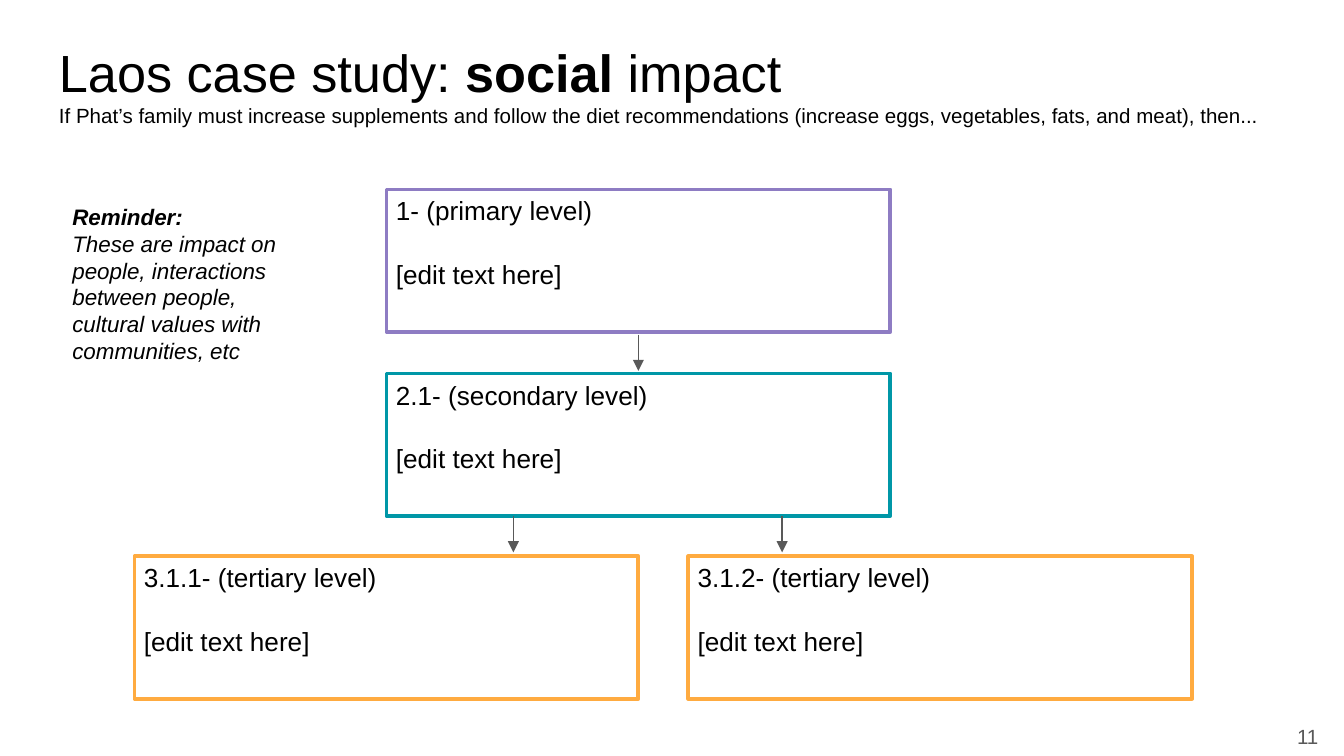
from lxml import etree
from pptx import Presentation
from pptx.dml.color import RGBColor
from pptx.enum.shapes import MSO_CONNECTOR, MSO_SHAPE
from pptx.enum.text import MSO_ANCHOR, PP_ALIGN
from pptx.oxml.ns import qn
from pptx.util import Inches, Pt

BLACK = RGBColor(0x00, 0x00, 0x00)
WHITE = RGBColor(0xFF, 0xFF, 0xFF)
GRAY = RGBColor(0x59, 0x59, 0x59)
PURPLE = RGBColor(0x8E, 0x7C, 0xC3)
TEAL = RGBColor(0x00, 0x97, 0xA7)
ORANGE = RGBColor(0xFF, 0xAB, 0x40)

SLIDE_WIDTH = 10
SLIDE_HEIGHT = SLIDE_WIDTH * 9 / 16
BOX_WIDTH, BOX_HEIGHT = 3.75, 1.06
PRIMARY_TOP, SECONDARY_TOP, TERTIARY_TOP = 1.41, 2.78, 4.14
CENTER_LEFT = (SLIDE_WIDTH - BOX_WIDTH) / 2 - 0.25
ARROW_LENGTH = 0.27


def add_span(para, text, size=14, color=BLACK, bold=False, italic=False):
    span = para.add_run()
    span.text = text
    font = span.font
    font.name = "Arial"
    font.size = Pt(size)
    font.color.rgb = color
    font.bold = bold
    font.italic = italic


def set_frame(frame, side, end, anchor=MSO_ANCHOR.TOP):
    """Wrap the text and set its insets (left/right, top/bottom) and anchor."""
    frame.word_wrap = True
    frame.vertical_anchor = anchor
    frame.margin_left = frame.margin_right = Inches(side)
    frame.margin_top = frame.margin_bottom = Inches(end)


def add_text_box(slide, left, top, width, height, side=0.1, end=0.1,
                 anchor=MSO_ANCHOR.TOP):
    box = slide.shapes.add_textbox(
        Inches(left), Inches(top), Inches(width), Inches(height))
    set_frame(box.text_frame, side, end, anchor)
    return box.text_frame


def add_level_box(slide, left, top, label, color):
    box = slide.shapes.add_shape(
        MSO_SHAPE.RECTANGLE, Inches(left), Inches(top),
        Inches(BOX_WIDTH), Inches(BOX_HEIGHT))
    box.shadow.inherit = False
    box.fill.solid()
    box.fill.fore_color.rgb = WHITE
    box.line.color.rgb = color
    box.line.width = Pt(2)
    frame = box.text_frame
    set_frame(frame, 0.07, 0.04)
    heading, prompt = frame.paragraphs[0], frame.add_paragraph()
    heading.alignment = prompt.alignment = PP_ALIGN.LEFT
    prompt.space_before = Pt(17)
    add_span(heading, label)
    add_span(prompt, "[edit text here]")


def add_down_arrow(slide, x, top):
    arrow = slide.shapes.add_connector(
        MSO_CONNECTOR.STRAIGHT, Inches(x), Inches(top),
        Inches(x), Inches(top + ARROW_LENGTH))
    arrow.line.color.rgb = GRAY
    arrow.line.width = Pt(0.75)
    properties = arrow._element.spPr
    outline = properties.find(qn("a:ln"))
    etree.SubElement(outline, qn("a:tailEnd"), type="triangle")
    etree.SubElement(properties, qn("a:effectLst"))


def add_title(slide):
    frame = add_text_box(slide, 0.34, 0.2, 9.32, 0.63)
    title = frame.paragraphs[0]
    add_span(title, "Laos case study: ", size=28)
    add_span(title, "social", size=28, bold=True)
    add_span(title, " impact", size=28)
    add_span(frame.add_paragraph(),
             "If Phat’s family must increase supplements and follow the diet "
             "recommendations (increase eggs, vegetables, fats, and meat), then...",
             size=11)


def add_reminder(slide):
    frame = add_text_box(slide, 0.44, PRIMARY_TOP, 1.86, 2.17)
    add_span(frame.paragraphs[0], "Reminder:", size=12, bold=True, italic=True)
    add_span(frame.add_paragraph(),
             "These are impact on people, interactions between people, "
             "cultural values with communities, etc", size=12, italic=True)


def add_page_number(slide):
    frame = add_text_box(slide, 7.55, 5.38, 2.33, 0.19, side=0.07, end=0.04,
                         anchor=MSO_ANCHOR.MIDDLE)
    para = frame.paragraphs[0]
    para.alignment = PP_ALIGN.RIGHT
    add_span(para, "11", size=11, color=GRAY)


def main():
    deck = Presentation()
    deck.slide_width = Inches(SLIDE_WIDTH)
    deck.slide_height = Inches(SLIDE_HEIGHT)
    slide = deck.slides.add_slide(deck.slide_layouts[6])

    add_title(slide)
    add_page_number(slide)
    for left, top, label, color in (
        (CENTER_LEFT, PRIMARY_TOP, "1- (primary level)", PURPLE),
        (CENTER_LEFT, SECONDARY_TOP, "2.1- (secondary level)", TEAL),
        (1, TERTIARY_TOP, "3.1.1- (tertiary level)", ORANGE),
        (5.12, TERTIARY_TOP, "3.1.2- (tertiary level)", ORANGE),
    ):
        add_level_box(slide, left, top, label, color)
    for x, top in ((4.75, 2.49), (5.82, 3.84), (3.82, 3.84)):
        add_down_arrow(slide, x, top)
    add_reminder(slide)

    deck.save("out.pptx")


if __name__ == "__main__":
    main()
